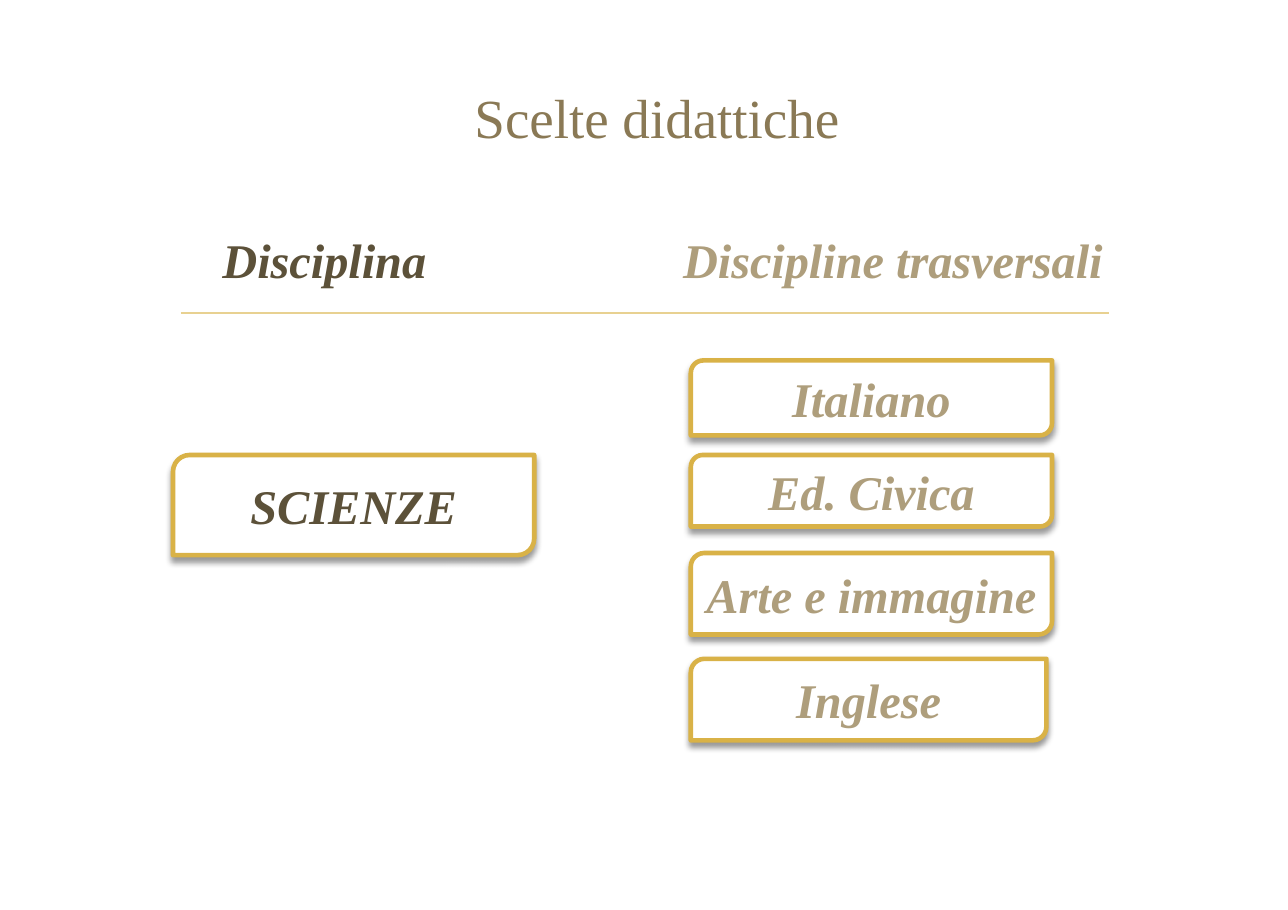
from dataclasses import dataclass

from lxml import etree
from pptx import Presentation
from pptx.dml.color import RGBColor
from pptx.enum.shapes import MSO_CONNECTOR, MSO_SHAPE
from pptx.enum.text import MSO_ANCHOR, MSO_AUTO_SIZE, PP_ALIGN
from pptx.oxml.ns import qn
from pptx.util import Cm, Pt

STRAIGHT = MSO_CONNECTOR.STRAIGHT
CARD = MSO_SHAPE.ROUND_2_DIAG_RECTANGLE
MIDDLE = MSO_ANCHOR.MIDDLE
FIXED = MSO_AUTO_SIZE.NONE
LEFT, CENTER = PP_ALIGN.LEFT, PP_ALIGN.CENTER


@dataclass(frozen=True)
class Theme:
    font: str = "Times New Roman"
    dark: str = "5C5139"
    light: str = "AE9E7C"
    head: str = "8A7955"
    gold: str = "D9B247"
    pale: str = "E8D191"
    white: str = "FFFFFF"
    shade: str = "000000"
    big: float = 36
    body: float = 31.6


def color(value):
    return RGBColor.from_string(value)


def write(para, text, *, font, size, ink, strong=True):
    run = para.add_run()
    run.text = text
    run.font.name = font
    run.font.size = Pt(size)
    run.font.color.rgb = color(ink)
    run.font.bold = run.font.italic = strong


def add_tab(para, place):
    """Set a left tab stop, measured from the start of the text."""
    tabs = etree.SubElement(para._p.get_or_add_pPr(), qn("a:tabLst"))
    etree.SubElement(tabs, qn("a:tab"), pos=str(place), algn="l")


def cast_shadow(shape, ink):
    """Give the shape a soft shadow that falls straight down."""
    shape.shadow.inherit = False
    effects = shape._element.spPr.find(qn("a:effectLst"))
    outer = etree.SubElement(
        effects, qn("a:outerShdw"), blurRad=str(Pt(4)), dist=str(Pt(3)),
        dir="5400000", rotWithShape="0")
    tint = etree.SubElement(outer, qn("a:srgbClr"), val=ink)
    etree.SubElement(tint, qn("a:alpha"), val="40000")


class Board:
    """Draws on one slide in one theme."""

    def __init__(self, slide, theme):
        self.slide = slide
        self.theme = theme

    def rule(self, left, right, y):
        line = self.slide.shapes.add_connector(
            STRAIGHT, Cm(left), Cm(y), Cm(right), Cm(y))
        line.line.color.rgb = color(self.theme.pale)
        line.line.width = Pt(1.25)
        etree.SubElement(line._element.spPr, qn("a:effectLst"))

    def title(self, first, second, left, top, width, height):
        """Set two column heads in the title, parted by a tab."""
        title = self.slide.shapes.title
        title.left, title.top = Cm(left), Cm(top)
        title.width, title.height = Cm(width), Cm(height)
        frame = title.text_frame
        frame.auto_size = FIXED
        frame.word_wrap = True
        frame.vertical_anchor = MIDDLE
        frame.margin_left, frame.margin_right = Cm(1.7), 0
        para = frame.paragraphs[0]
        para.alignment = LEFT
        add_tab(para, Cm(10.62))
        look = self.theme
        write(para, first + "\t", font=look.font, size=look.body, ink=look.dark)
        write(para, second, font=look.font, size=look.body, ink=look.light)

    def label(self, text, left, top, width, height):
        box = self.slide.shapes.add_textbox(
            Cm(left), Cm(top), Cm(width), Cm(height))
        box.text_frame.word_wrap = True
        look = self.theme
        write(box.text_frame.paragraphs[0], text, font=look.font,
              size=look.big, ink=look.head, strong=False)

    def card(self, text, left, top, width, height, ink):
        look = self.theme
        card = self.slide.shapes.add_shape(
            CARD, Cm(left), Cm(top), Cm(width), Cm(height))
        card.fill.solid()
        card.fill.fore_color.rgb = color(look.white)
        card.line.color.rgb = color(look.gold)
        card.line.width = Pt(3)
        cast_shadow(card, look.shade)
        frame = card.text_frame
        frame.word_wrap = True
        frame.vertical_anchor = MIDDLE
        frame.margin_left = frame.margin_right = 0
        para = frame.paragraphs[0]
        para.alignment = CENTER
        write(para, text, font=look.font, size=look.body, ink=ink)


def main():
    deck = Presentation()
    deck.slide_width, deck.slide_height = Cm(29.7), Cm(20.98)
    theme = Theme()
    board = Board(deck.slides.add_slide(deck.slide_layouts[5]), theme)

    board.rule(4.17, 25.58, 7.21)
    board.title("Disciplina", "Discipline trasversali", 3.43, 5.03, 23.6, 1.88)
    board.label("Scelte didattiche", 10.69, 1.8, 8.94, 1.8)
    board.card("SCIENZE", 3.99, 10.49, 8.33, 2.31, theme.dark)
    linked = [
        ("Italiano", 8.31, 8.33, 1.73),
        ("Ed. Civica", 10.49, 8.33, 1.65),
        ("Arte e immagine", 12.75, 8.33, 1.88),
        ("Inglese", 15.19, 8.2, 1.88),
    ]
    for name, top, width, height in linked:
        board.card(name, 15.93, top, width, height, theme.light)

    deck.save("out.pptx")


if __name__ == "__main__":
    main()
